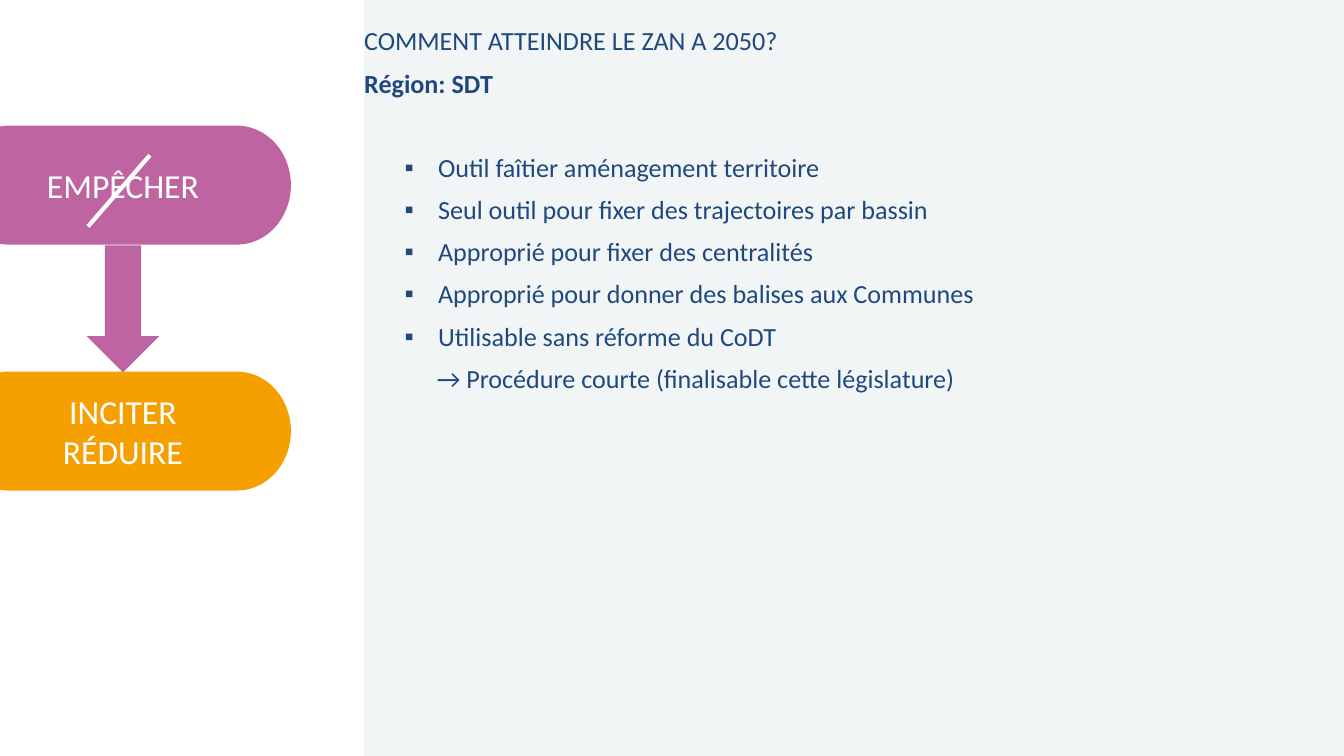
from typing import NamedTuple

from lxml.etree import SubElement as Sub
from pptx import Presentation
from pptx.dml.color import RGBColor as RGB
from pptx.enum.shapes import MSO_CONNECTOR as Link, MSO_SHAPE as Kind
from pptx.enum.text import MSO_ANCHOR as Anchor, PP_ALIGN as Align
from pptx.oxml.ns import qn
from pptx.util import Inches, Pt

WHITE = RGB(0xFF, 0xFF, 0xFF)
NAVY = RGB(0x1F, 0x49, 0x7D)
TEAL = RGB(0x05, 0x3D, 0x57)
PINK = RGB(0xBE, 0x65, 0xA1)
AMBER = RGB(0xF5, 0xA0, 0x00)
FONT = "Calibri"
WIDE, HIGH, SPLIT = 20, 11.25, 5.42


class Block(NamedTuple):
    kind: Kind
    box: tuple[float, float, float, float]
    color: RGB
    lines: tuple[str, ...] = ()


class Line(NamedTuple):
    text: str
    bold: bool = False
    left: float = 0
    hang: float = 0
    gap: float = 15


PANEL = Block(Kind.RECTANGLE, (SPLIT, 0, WIDE - SPLIT, HIGH), TEAL)
STEPS = (
    Block(Kind.FLOWCHART_TERMINATOR, (-0.67, 5.53, 5, 1.77), AMBER,
          ("INCITER", "RÉDUIRE")),
    Block(Kind.FLOWCHART_TERMINATOR, (-0.67, 1.87, 5, 1.77), PINK,
          ("EMPÊCHER",)),
    Block(Kind.DOWN_ARROW, (1.29, 3.65, 1.08, 1.89), PINK),
)
POINTS = (
    "Outil faîtier aménagement territoire",
    "Seul outil pour fixer des trajectoires par bassin",
    "Approprié pour fixer des centralités",
    "Approprié pour donner des balises aux Communes",
    "Utilisable sans réforme du CoDT",
)
BODY = (
    Line("COMMENT ATTEINDRE LE ZAN A 2050?", gap=0),
    Line("Région: SDT", bold=True),
    *(Line(text, left=1.1, hang=0.5, gap=15 if n else 60)
      for n, text in enumerate(POINTS)),
    Line("→ Procédure courte (finalisable cette législature)", left=1.08),
)


def put(obj, form: dict) -> None:
    for name, value in form.items():
        setattr(obj, name, value)


def write(para, text: str, size: float, color: RGB, bold: bool = False) -> None:
    run = para.add_run()
    run.text = text
    put(run.font, {"name": FONT, "size": Pt(size), "bold": bold})
    run.font.color.rgb = color


def draw(slide, block: Block):
    shape = slide.shapes.add_shape(block.kind, *map(Inches, block.box))
    shape.shadow.inherit = False
    shape.fill.solid()
    shape.fill.fore_color.rgb = block.color
    shape.line.fill.background()
    frame = shape.text_frame
    frame.vertical_anchor = Anchor.MIDDLE
    for n, text in enumerate(block.lines):
        para = frame.add_paragraph() if n else frame.paragraphs[0]
        para.alignment = Align.CENTER
        write(para, text, 36, WHITE)
    return shape


def fade(shape, share: int) -> None:
    """Set the opacity of a solid fill, in percent."""
    color = shape.fill._xPr.find(qn("a:solidFill"))[0]
    Sub(color, qn("a:alpha"), val=str(share * 1000))


def indent(para, line: Line) -> None:
    props = para._p.get_or_add_pPr()
    props.set("marL", str(Inches(line.left)))
    props.set("indent", str(Inches(-line.hang)))
    if line.hang:
        Sub(props, qn("a:buFont"), typeface="Arial")
        Sub(props, qn("a:buChar"), char="▪")
    else:
        Sub(props, qn("a:buNone"))


def fill_body(slide) -> None:
    box = slide.shapes.add_textbox(*map(Inches, (SPLIT, 0.42, 13.14, 7.31)))
    frame = box.text_frame
    put(frame, {"word_wrap": True, "margin_left": 0, "margin_right": 0,
                "margin_top": 0, "margin_bottom": 0})
    for n, line in enumerate(BODY):
        para = frame.add_paragraph() if n else frame.paragraphs[0]
        indent(para, line)
        put(para, {"line_spacing": 0.9, "space_before": Pt(line.gap)})
        write(para, line.text, 28, NAVY, line.bold)


def strike(slide) -> None:
    """Cross out the upper step."""
    ends = map(Inches, (2.23, 2.31, 1.31, 3.37))
    bar = slide.shapes.add_connector(Link.STRAIGHT, *ends)
    bar.line.color.rgb = WHITE
    bar.line.width = Pt(4.5)
    Sub(bar._element.spPr, qn("a:effectLst"))


def main() -> None:
    deck = Presentation()
    put(deck, {"slide_width": Inches(WIDE), "slide_height": Inches(HIGH)})
    slide = deck.slides.add_slide(deck.slide_layouts[6])
    fade(draw(slide, PANEL), 5)
    fill_body(slide)
    for step in STEPS:
        draw(slide, step)
    strike(slide)
    deck.save("out.pptx")


if __name__ == "__main__":
    main()
